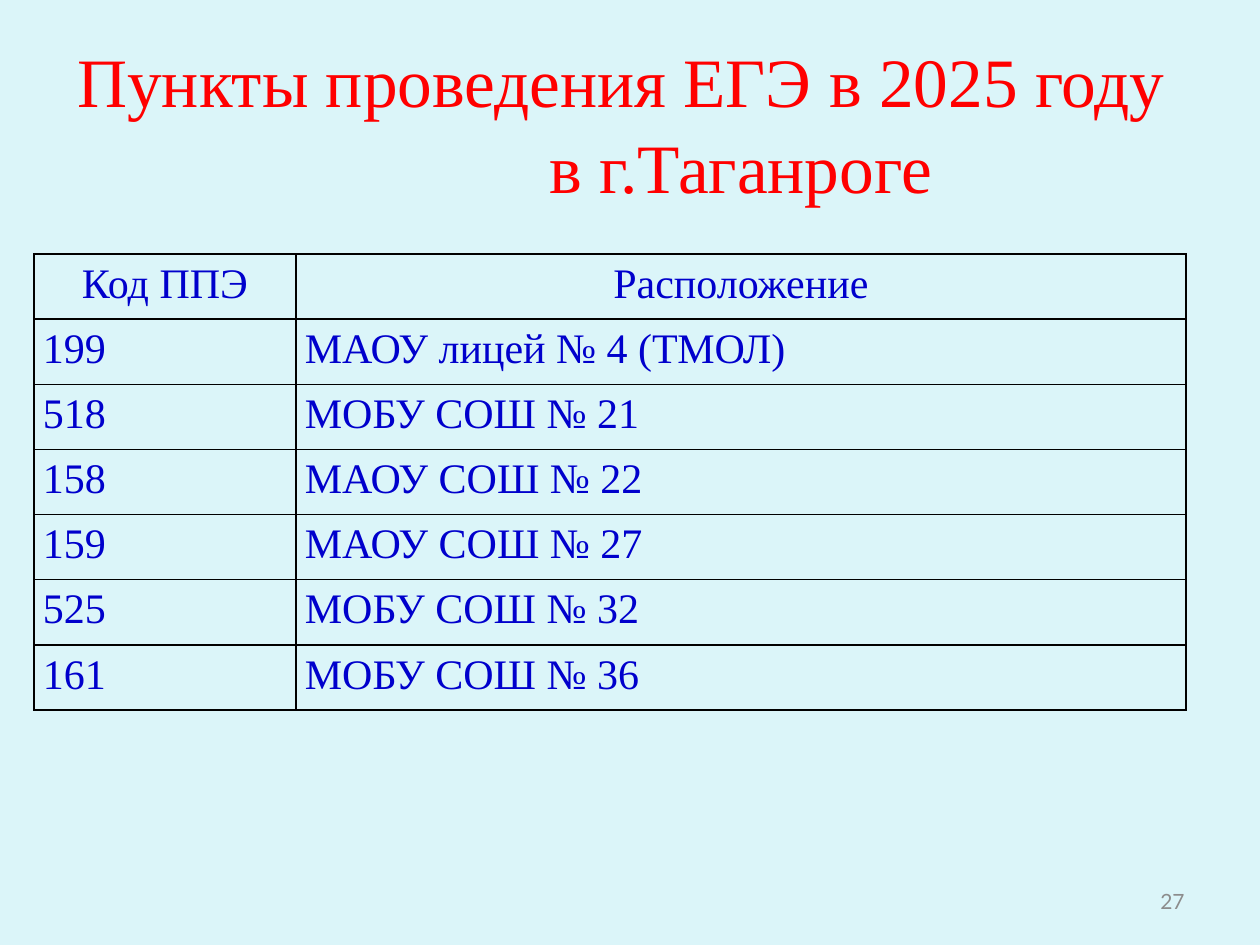
from dataclasses import dataclass

from lxml import etree
from pptx import Presentation, util as u
from pptx.dml.color import RGBColor
from pptx.enum import text
from pptx.oxml.ns import qn

PX = 914400 // 126


@dataclass(frozen=True)
class Style:
    font: str
    size: float
    color: str
    align: text.PP_ALIGN
    line_spacing: float = 1.0


@dataclass(frozen=True)
class Theme:
    background: str = "DBF5F9"
    border: str = "000000"
    border_width: int = 1
    title: Style = Style("Times New Roman", 39.6, "FF0000", text.PP_ALIGN.CENTER, 1.04)
    header: Style = Style("Times New Roman", 24, "0000CC", text.PP_ALIGN.CENTER, 1.15)
    body: Style = Style("Times New Roman", 24, "0000CC", text.PP_ALIGN.LEFT, 1.15)
    number: Style = Style("Lato", 12, "8C8C8C", text.PP_ALIGN.RIGHT)


@dataclass(frozen=True)
class Box:
    left: int
    top: int
    width: int
    height: int

    def emu(self) -> tuple[int, ...]:
        return tuple(value * PX for value in (self.left, self.top, self.width, self.height))


@dataclass(frozen=True)
class ExamPoint:
    code: str
    location: str


THEME = Theme()
HEADER = ExamPoint("Код ППЭ", "Расположение")
EXAM_POINTS = [
    ExamPoint("199", "МАОУ лицей № 4 (ТМОЛ)"),
    ExamPoint("518", "МОБУ СОШ № 21"),
    ExamPoint("158", "МАОУ СОШ № 22"),
    ExamPoint("159", "МАОУ СОШ № 27"),
    ExamPoint("525", "МОБУ СОШ № 32"),
    ExamPoint("161", "МОБУ СОШ № 36"),
]
TITLE_BOX = Box(63, 38, 1134, 158)
NUMBER_BOX = Box(903, 876, 294, 50)
TABLE_BOX = Box(34, 254, 1152, 456)
COLUMN_WIDTHS = (262, 890)
CELL_MARGIN = 9
TITLE_RIGHT_INSET = 18
TITLE_TOP_INSET = 8
SECOND_LINE_INDENT = 240


def format_text(text_frame, style: Style) -> None:
    for paragraph in text_frame.paragraphs:
        paragraph.alignment = style.align
        paragraph.line_spacing = style.line_spacing
        for run in paragraph.runs:
            run.font.name = style.font
            run.font.size = u.Pt(style.size)
            run.font.color.rgb = RGBColor.from_string(style.color)


def add_text(slide, box: Box, content: str, style: Style):
    text_frame = slide.shapes.add_textbox(*box.emu()).text_frame
    text_frame.word_wrap = True
    text_frame.vertical_anchor = text.MSO_ANCHOR.MIDDLE
    text_frame.text = content
    format_text(text_frame, style)
    return text_frame


def add_title(slide) -> None:
    text_frame = add_text(slide, TITLE_BOX, "Пункты проведения ЕГЭ в 2025 году\nв г.Таганроге", THEME.title)
    text_frame.margin_left = text_frame.margin_bottom = 0
    text_frame.margin_right = TITLE_RIGHT_INSET * PX
    text_frame.margin_top = TITLE_TOP_INSET * PX
    properties = text_frame.paragraphs[1]._p.get_or_add_pPr()
    properties.set("marL", str(SECOND_LINE_INDENT * PX))
    properties.set("indent", "0")


def add_borders(cell) -> None:
    properties = cell._tc.get_or_add_tcPr()
    for position, side in enumerate(("lnL", "lnR", "lnT", "lnB")):
        line = etree.Element(qn(f"a:{side}"), w=str(u.Pt(THEME.border_width)))
        fill = etree.SubElement(line, qn("a:solidFill"))
        etree.SubElement(fill, qn("a:srgbClr"), val=THEME.border)
        properties.insert(position, line)


def fill_cell(cell, content: str, style: Style) -> None:
    cell.fill.background()
    cell.margin_left = cell.margin_right = CELL_MARGIN * PX
    cell.margin_top = cell.margin_bottom = 0
    cell.text_frame.text = content
    format_text(cell.text_frame, style)
    add_borders(cell)


def add_exam_table(slide) -> None:
    points = [HEADER, *EXAM_POINTS]
    table = slide.shapes.add_table(len(points), len(COLUMN_WIDTHS), *TABLE_BOX.emu()).table
    table.first_row = table.horz_banding = False
    for column, width in zip(table.columns, COLUMN_WIDTHS):
        column.width = width * PX
    for row, point in zip(table.rows, points):
        style = THEME.header if point is HEADER else THEME.body
        for cell, content in zip(row.cells, (point.code, point.location)):
            fill_cell(cell, content, style)


def main() -> None:
    presentation = Presentation()
    presentation.slide_width = u.Inches(10)
    presentation.slide_height = u.Inches(7.5)
    slide = presentation.slides.add_slide(presentation.slide_layouts[6])
    slide.background.fill.solid()
    slide.background.fill.fore_color.rgb = RGBColor.from_string(THEME.background)
    add_title(slide)
    add_text(slide, NUMBER_BOX, "27", THEME.number)
    add_exam_table(slide)
    presentation.save("out.pptx")


if __name__ == "__main__":
    main()
